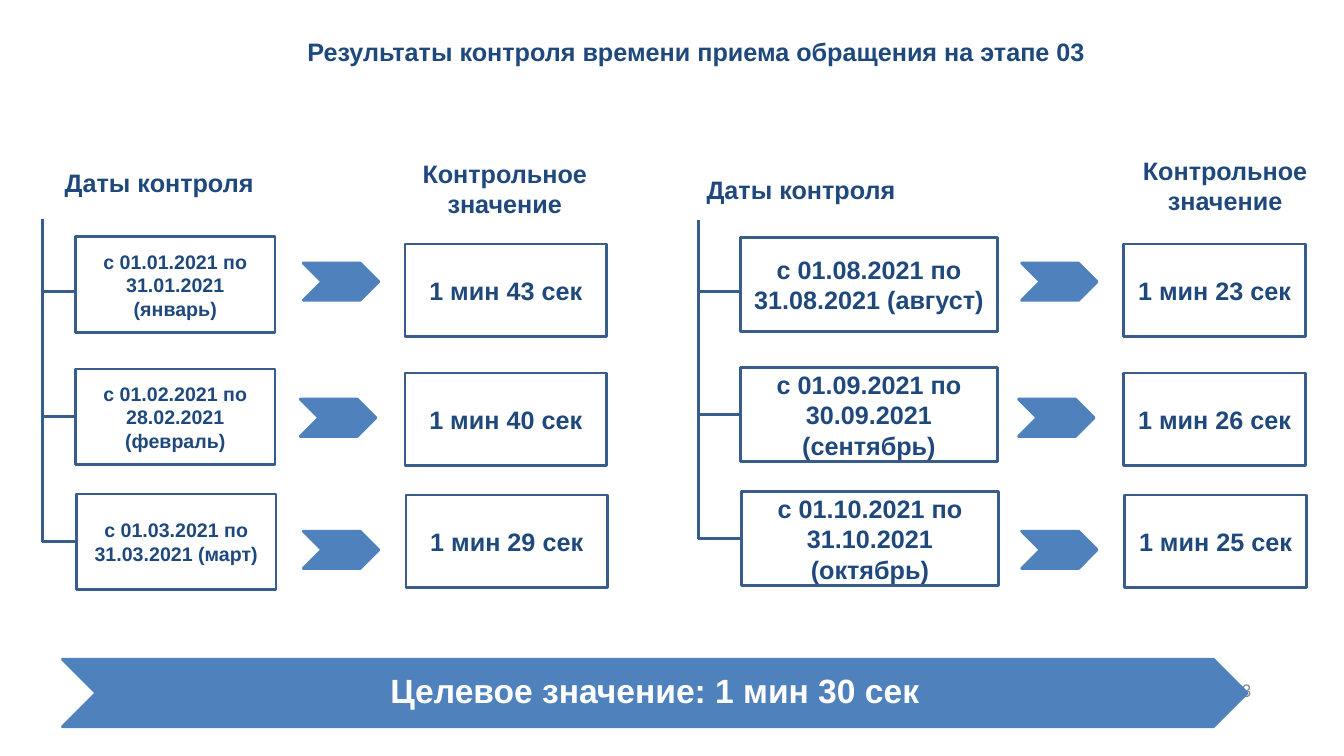
from lxml import etree
from pptx import Presentation
from pptx import util as u
from pptx.dml.color import RGBColor
from pptx.enum import shapes, text
from pptx.oxml.ns import qn

COLORS = {
    "heading": "1F497D",
    "outline": "385D8A",
    "arrow": "4F81BD",
    "white": "FFFFFF",
    "number": "8C8C8C",
}
COLUMNS, ROWS = 133.4, 75
SLIDE_WIDTH, SLIDE_HEIGHT = u.Inches(13.34), u.Inches(7.5)

VALUE_TOPS = (24.2, 37, 49.1)
ARROW_TOPS = (26.1, 39.6, 52.7)
ARROW_SHIFTS = (0, -0.3, 0)
LAST_SHIFTS = (0, 0, 0.1)

PANELS = [
    {
        "trunk": 4.2, "trunk_top": 21.7, "first_branch": 28.9,
        "dates_left": 7.5, "dates_width": 19.8, "dates_height": 9.5,
        "dates_tops": (23.5, 36.6, 49), "dates_size": 14,
        "arrow_left": 30.1, "value_left": 40.2, "value_width": 20,
        "dates_heading": (-1.9, 15, 35.4, 6.2),
        "value_heading": (38.5, 16.4, 23.2, 4.6),
        "rows": [
            ("с 01.01.2021 по 31.01.2021 (январь)", "1 мин 43 сек"),
            ("с 01.02.2021 по 28.02.2021 (февраль)", "1 мин 40 сек"),
            ("с 01.03.2021 по 31.03.2021 (март)", "1 мин 29 сек"),
        ],
    },
    {
        "trunk": 69.3, "trunk_top": 21.8, "first_branch": 28.9,
        "dates_left": 73.5, "dates_width": 25.5, "dates_height": 9.3,
        "dates_tops": (23.6, 36.5, 48.8), "dates_size": 18,
        "arrow_left": 101.4, "value_left": 111.5, "value_width": 18.1,
        "dates_heading": (61.8, 15.7, 35.4, 6.2),
        "value_heading": (109.7, 16.1, 23.8, 4.6),
        "rows": [
            ("с 01.08.2021 по 31.08.2021 (август)", "1 мин 23 сек"),
            ("с 01.09.2021 по 30.09.2021 (сентябрь)", "1 мин 26 сек"),
            ("с 01.10.2021 по 31.10.2021 (октябрь)", "1 мин 25 сек"),
        ],
    },
]


def column(count):
    return round(SLIDE_WIDTH * count / COLUMNS)


def row(count):
    return round(SLIDE_HEIGHT * count / ROWS)


def place(left, top, width, height):
    return column(left), row(top), column(width), row(height)


def color(name):
    return RGBColor.from_string(COLORS[name])


def write(shape, words, size=18, ink="heading", bold=True, font="Arial",
          align=text.PP_ALIGN.CENTER):
    frame = shape.text_frame
    frame.word_wrap = True
    frame.auto_size = text.MSO_AUTO_SIZE.NONE
    frame.vertical_anchor = text.MSO_ANCHOR.MIDDLE
    frame.text = words
    paragraph = frame.paragraphs[0]
    paragraph.alignment = align
    paragraph.font.name = font
    paragraph.font.size = u.Pt(size)
    paragraph.font.bold = bold
    paragraph.font.color.rgb = color(ink)


def add_label(slide, area, words, **style):
    label = slide.shapes.add_textbox(*place(*area))
    write(label, words, **style)


def add_block(slide, kind, area, fill, outline):
    block = slide.shapes.add_shape(kind, *place(*area))
    block.shadow.inherit = False
    block.fill.solid()
    block.fill.fore_color.rgb = color(fill)
    block.line.color.rgb = color(outline)
    block.line.width = u.Pt(2)
    return block


def add_box(slide, area, words, size=18):
    box = add_block(slide, shapes.MSO_SHAPE.RECTANGLE, area, "white", "outline")
    write(box, words, size)
    return box


def add_chevron(slide, area):
    return add_block(slide, shapes.MSO_SHAPE.CHEVRON, area, "arrow", "arrow")


def add_line(slide, x1, y1, x2, y2):
    line = slide.shapes.add_connector(shapes.MSO_CONNECTOR.STRAIGHT, x1, y1, x2, y2)
    line.line.color.rgb = color("outline")
    line.line.width = u.Pt(2.25)
    etree.SubElement(line._element.spPr, qn("a:effectLst"))
    return line


def add_panel(slide, panel):
    add_label(slide, panel["dates_heading"], "Даты контроля")
    add_label(slide, panel["value_heading"], "Контрольное значение")
    trunk = column(panel["trunk"])
    for index, (dates, value) in enumerate(panel["rows"]):
        shift = LAST_SHIFTS[index]
        box = add_box(slide, (panel["dates_left"] + shift, panel["dates_tops"][index],
                              panel["dates_width"], panel["dates_height"]),
                      dates, panel["dates_size"])
        middle = box.top + box.height // 2
        branch = row(panel["first_branch"]) if index == 0 else middle
        line = add_line(slide, trunk, branch, box.left, branch)
        if branch == middle:
            line.end_connect(box, 1)
        add_chevron(slide, (panel["arrow_left"] + ARROW_SHIFTS[index],
                            ARROW_TOPS[index], 7.5, 3.7))
        add_box(slide, (panel["value_left"] + shift, VALUE_TOPS[index],
                        panel["value_width"], 9.2), value)
    add_line(slide, trunk, row(panel["trunk_top"]), trunk, middle)


def add_target(slide):
    bar = add_chevron(slide, (6.2, 65.4, 117.6, 6.7))
    write(bar, "Целевое значение: 1 мин 30 сек", 24, "white")
    bar.text_frame.paragraphs[0].line_spacing = 0.9


def main():
    presentation = Presentation()
    presentation.slide_width, presentation.slide_height = SLIDE_WIDTH, SLIDE_HEIGHT
    slide = presentation.slides.add_slide(presentation.slide_layouts[5])
    title = slide.shapes.title
    title.left, title.top, title.width, title.height = place(11.5, 1.9, 115.2, 6.5)
    write(title, "Результаты контроля времени приема обращения на этапе 03")
    add_label(slide, (94.1, 66.4, 31.1, 4), "3", size=14, ink="number", bold=False,
              font="Calibri", align=text.PP_ALIGN.RIGHT)
    add_target(slide)
    for panel in PANELS:
        add_panel(slide, panel)
    presentation.save("out.pptx")


if __name__ == "__main__":
    main()
